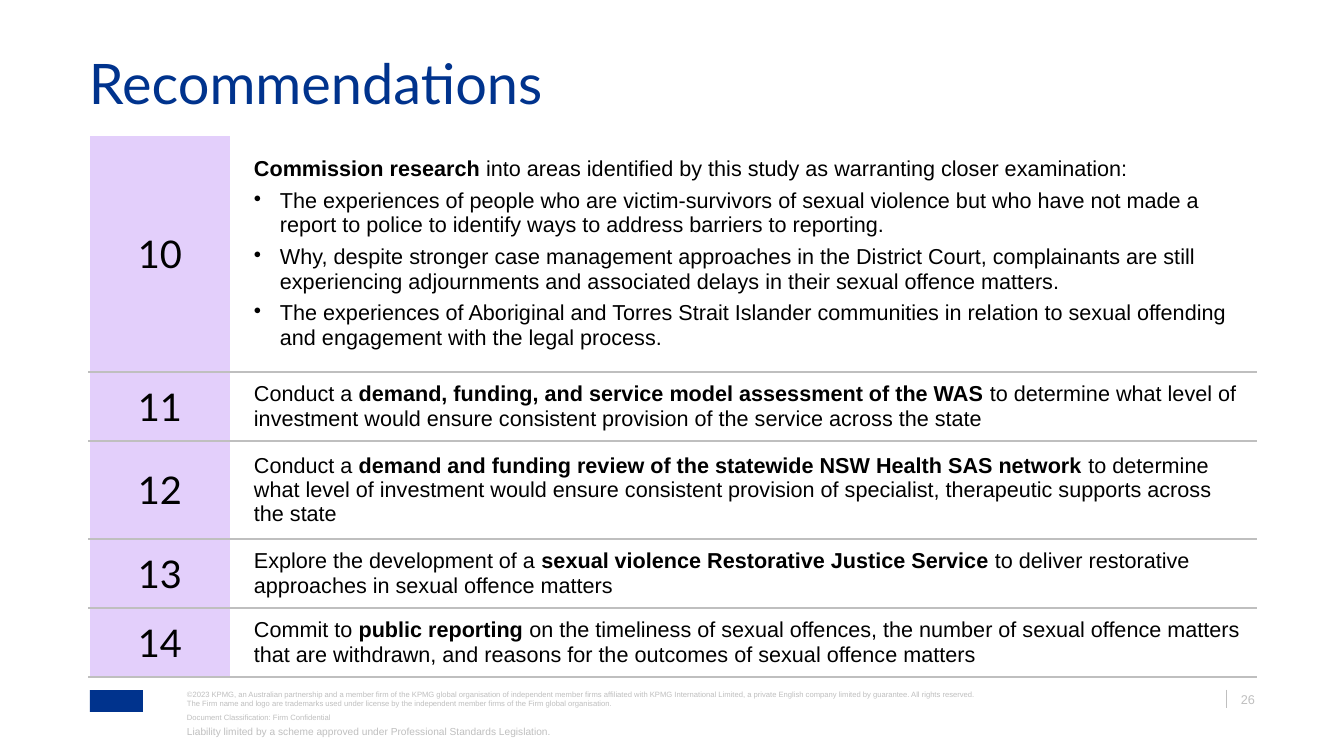
from lxml import etree
from pptx import Presentation
from pptx import util as u
from pptx.dml.color import RGBColor
from pptx.enum import shapes, text
from pptx.oxml import ns

PX = 10000
NAVY, GREY, LILAC, BLACK, WHITE = "00338D", "BFBFBF", "E3CFFB", "000000", "FFFFFF"


def colour(code):
    return RGBColor.from_string(code)


def write(para, content, font, size, code):
    for index, part in enumerate(content.split("*")):
        span = para.add_run()
        span.text = part
        span.font.name = font
        span.font.size = u.Pt(size)
        span.font.bold = index % 2 == 1
        span.font.color.rgb = colour(code)


deck = Presentation()
deck.slide_width, deck.slide_height = 1344 * PX, 756 * PX
page = deck.slides.add_slide(deck.slide_layouts[5])

title = page.shapes.title
title.left, title.top, title.width, title.height = [n * PX for n in (89, 67, 1167, 59)]
frame = title.text_frame
frame.margin_left = frame.margin_right = frame.margin_top = frame.margin_bottom = 0
frame.vertical_anchor = text.MSO_ANCHOR.TOP
frame.auto_size = text.MSO_AUTO_SIZE.NONE
frame.paragraphs[0].alignment = text.PP_ALIGN.LEFT
frame.paragraphs[0].line_spacing = 0.7
write(frame.paragraphs[0], "Recommendations", "Lato", 44, NAVY)

recommendations = [
    (237, "10", [
        "*Commission research *into areas identified by this study as warranting closer examination:",
        "The experiences of people who are victim-survivors of sexual violence but who have not made a report to police to identify ways to address barriers to reporting.",
        "Why, despite stronger case management approaches in the District Court, complainants are still experiencing adjournments and associated delays in their sexual offence matters.",
        "The experiences of Aboriginal and Torres Strait Islander communities in relation to sexual offending and engagement with the legal process.",
    ]),
    (69, "11", ["Conduct a *demand, funding, and service model assessment of the WAS *to determine what level of investment would ensure consistent provision of the service across the state"]),
    (98, "12", ["Conduct a *demand and funding review of the statewide NSW Health SAS network *to determine what level of investment would ensure consistent provision of specialist, therapeutic supports across the state"]),
    (69, "13", ["Explore the development of a *sexual violence Restorative Justice Service *to deliver restorative approaches in sexual offence matters"]),
    (69, "14", ["Commit to *public reporting *on the timeliness of sexual offences, the number of sexual offence matters that are withdrawn, and reasons for the outcomes of sexual offence matters"]),
]

table = page.shapes.add_table(len(recommendations), 2, 89 * PX, 135 * PX, 1167 * PX, 542 * PX).table
table.first_row = table.horz_banding = False
table.columns[0].width, table.columns[1].width = 142 * PX, 1025 * PX

for row, (height, number, points) in enumerate(recommendations):
    table.rows[row].height = height * PX
    number_cell, detail_cell = table.cell(row, 0), table.cell(row, 1)

    for cell in (number_cell, detail_cell):
        cell.vertical_anchor = text.MSO_ANCHOR.MIDDLE
        top = (GREY, 1.5) if row else (WHITE, 1)
        edges = {"L": (WHITE, 1), "R": (WHITE, 1), "T": top, "B": (GREY, 1.5)}
        for side, (code, width) in edges.items():
            edge = etree.SubElement(cell._tc.get_or_add_tcPr(), ns.qn("a:ln" + side), w=str(u.Pt(width)))
            fill = etree.SubElement(edge, ns.qn("a:solidFill"))
            etree.SubElement(fill, ns.qn("a:srgbClr"), val=code)

    number_cell.fill.solid()
    number_cell.fill.fore_color.rgb = colour(LILAC)
    para = number_cell.text_frame.paragraphs[0]
    para.alignment = text.PP_ALIGN.CENTER
    write(para, number, "Lato", 30, BLACK)

    detail_cell.fill.background()
    detail_cell.margin_left = detail_cell.margin_top = detail_cell.margin_bottom = 5 * PX
    detail_cell.margin_right = 11 * PX
    frame = detail_cell.text_frame
    for index, point in enumerate(points):
        para = frame.add_paragraph() if index else frame.paragraphs[0]
        props = para._p.get_or_add_pPr()
        props.set("marL", str((44 if index else 18) * PX))
        props.set("indent", str((-26 if index else 0) * PX))
        if index:
            etree.SubElement(props, ns.qn("a:buChar"), char="•")
            para.space_before = u.Pt(6)
        write(para, point, "Arial", 17, BLACK)

footers = [
    (187, 690, 925, 18, 6, [
        "©2023 KPMG, an Australian partnership and a member firm of the KPMG global organisation of independent member firms affiliated with KPMG International Limited, a private English company limited by guarantee. All rights reserved.",
        "The Firm name and logo are trademarks used under license by the independent member firms of the Firm global organisation.",
    ]),
    (187, 713, 681, 8, 6, ["Document Classification: Firm Confidential"]),
    (187, 725, 400, 12, 8, ["Liability limited by a scheme approved under Professional Standards Legislation."]),
    (1228, 690, 27, 17, 10, ["26"]),
]
for left, top, width, height, size, lines in footers:
    box = page.shapes.add_textbox(left * PX, top * PX, width * PX, height * PX)
    frame = box.text_frame
    frame.word_wrap = True
    frame.margin_left = frame.margin_right = frame.margin_top = frame.margin_bottom = 0
    for index, line in enumerate(lines):
        para = frame.add_paragraph() if index else frame.paragraphs[0]
        write(para, line, "Arial", size, GREY)
page_number = frame
page_number.vertical_anchor = text.MSO_ANCHOR.BOTTOM
page_number.paragraphs[0].alignment = text.PP_ALIGN.RIGHT

divider = page.shapes.add_connector(shapes.MSO_CONNECTOR.STRAIGHT, 1226 * PX, 690 * PX, 1226 * PX, 708 * PX)
divider.line.color.rgb = colour(GREY)
divider.line.width = u.Pt(0.5)
etree.SubElement(divider._element.spPr, ns.qn("a:effectLst"))

emblem = page.shapes.add_shape(shapes.MSO_SHAPE.RECTANGLE, 90 * PX, 690 * PX, 53 * PX, 22 * PX)
emblem.shadow.inherit = False
emblem.fill.solid()
emblem.fill.fore_color.rgb = colour(NAVY)
emblem.line.fill.background()

deck.save("out.pptx")
